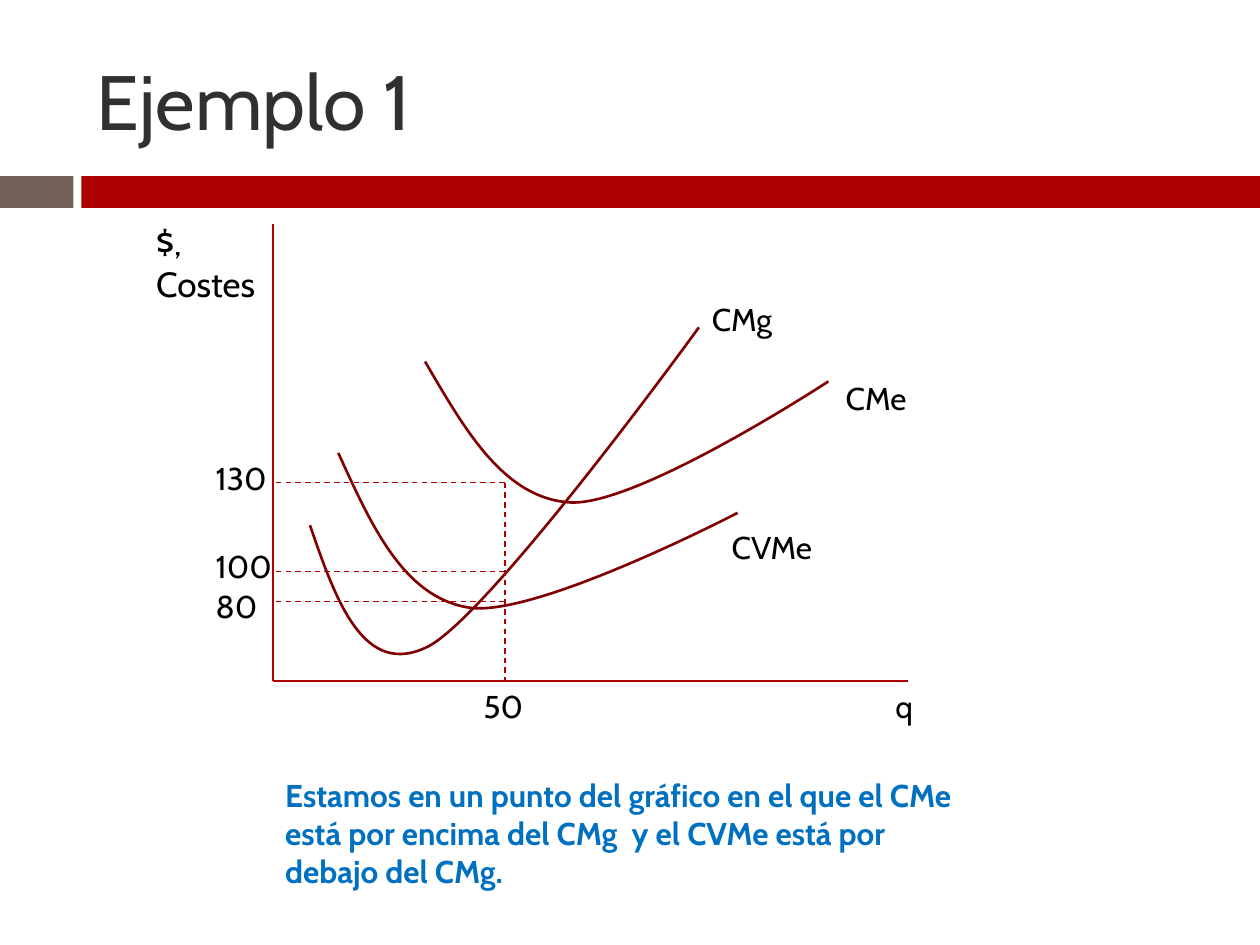
import pptx
import pptx.dml.color
import pptx.enum.dml
import pptx.enum.shapes
import pptx.enum.text
import pptx.oxml.ns
import pptx.util
from lxml import etree

Cm = pptx.util.Cm
Pt = pptx.util.Pt
qn = pptx.oxml.ns.qn
FONT = "Cabin"
RED = "AD0101"
DARK_RED = "800101"
STEPS = 24


def color(hex_code):
    return pptx.dml.color.RGBColor.from_string(hex_code)


def style_text(frame, size, hex_code, bold=False):
    frame.word_wrap = True
    for paragraph in frame.paragraphs:
        paragraph.alignment = pptx.enum.text.PP_ALIGN.LEFT
        paragraph.font.name = FONT
        paragraph.font.size = Pt(size)
        paragraph.font.bold = bold
        paragraph.font.color.rgb = color(hex_code)


def add_label(slide, text, left, top, width=2.69, height=1.02,
              size=18, hex_code="000000", bold=False):
    label = slide.shapes.add_textbox(Cm(left), Cm(top), Cm(width), Cm(height))
    label.text_frame.text = text
    style_text(label.text_frame, size, hex_code, bold)


def add_line(slide, x1, y1, x2, y2, dashed=False):
    line = slide.shapes.add_connector(
        pptx.enum.shapes.MSO_CONNECTOR.STRAIGHT, Cm(x1), Cm(y1), Cm(x2), Cm(y2))
    line.line.color.rgb = color(RED)
    line.line.width = Pt(0.79)
    if dashed:
        line.line.dash_style = pptx.enum.dml.MSO_LINE.DASH
    etree.SubElement(line._element.spPr, qn("a:effectLst"))


def bezier_point(controls, t):
    weights = ((1 - t) ** 3, 3 * t * (1 - t) ** 2, 3 * t ** 2 * (1 - t), t ** 3)
    return tuple(sum(w * p[axis] for w, p in zip(weights, controls)) for axis in (0, 1))


def add_curve(slide, left, top, knots, rotation):
    knots = [(Cm(left + x), Cm(top + y)) for x, y in knots]
    segments = [knots[first:first + 4] for first in range(0, len(knots) - 1, 3)]
    outline = [bezier_point(segment, step / STEPS)
               for segment in segments for step in range(1, STEPS + 1)]
    builder = slide.shapes.build_freeform(*knots[0])
    builder.add_line_segments(outline, close=False)
    curve = builder.convert_to_shape()
    outline_path = curve._element.spPr.find(".//" + qn("a:path"))
    for straight in outline_path.findall(qn("a:lnTo")):
        outline_path.remove(straight)
    for segment in segments:
        bend = etree.SubElement(outline_path, qn("a:cubicBezTo"))
        for x, y in segment[1:]:
            etree.SubElement(bend, qn("a:pt"), x=str(x - curve.left), y=str(y - curve.top))
    curve.rotation = rotation
    curve.shadow.inherit = False
    curve.fill.background()
    curve.line.color.rgb = color(DARK_RED)
    curve.line.width = Pt(1.5)


def add_header(slide, left, top, width):
    bar_top = top + 3.55
    for offset, bar_width, fill in ((0, 1.48, "726056"), (1.64, width - 1.64, RED)):
        bar = slide.shapes.add_shape(
            pptx.enum.shapes.MSO_SHAPE.RECTANGLE,
            Cm(left + offset), Cm(bar_top), Cm(bar_width), Cm(0.64))
        bar.shadow.inherit = False
        bar.fill.solid()
        bar.fill.fore_color.rgb = color(fill)
        bar.line.fill.background()
    title = slide.shapes.title
    title.left, title.top = Cm(left + 1.7), Cm(top + 0.64)
    title.width, title.height = Cm(22.35), Cm(2.74)
    title.text_frame.text = "Ejemplo 1"
    title.text_frame.vertical_anchor = pptx.enum.text.MSO_ANCHOR.MIDDLE
    style_text(title.text_frame, 44, "303030")


def add_cost_graph(slide, left, top, width, height):
    bottom = top + height
    add_line(slide, left, top, left, bottom)
    add_line(slide, left, bottom, left + width, bottom)

    marginal = [(0.75, 6.07), (1.28, 7.62), (1.84, 9.17), (3.14, 8.51),
                (4.43, 7.82), (8.59, 2.08), (8.59, 2.08)]
    average = [(3.07, 2.77), (3.87, 4.14), (4.66, 5.54), (6.01, 5.61),
               (7.38, 5.67), (11.2, 3.17), (11.2, 3.17)]
    cost_curves = (
        ("CMg", (8.6, 1.4), marginal, (0, 0), 0),
        ("CMe", (11.3, 3.0), average, (0, 0), 0),
        ("CVMe", (9.0, 6.0), average, (-1.91, 2.24), 5.7),
    )
    for name, (label_x, label_y), knots, (shift_x, shift_y), rotation in cost_curves:
        add_curve(slide, left + shift_x, top + shift_y, knots, rotation)
        add_label(slide, name, left + label_x, top + label_y)

    quantity_x = left + 4.68
    cost_levels = (("130", 5.21, 4.6), ("100", 7.0, 6.38), ("80", 7.6, 7.18))
    add_line(slide, quantity_x, top + cost_levels[0][1], quantity_x, bottom, dashed=True)
    for cost, level, label_y in cost_levels:
        add_line(slide, quantity_x, top + level, left, top + level, dashed=True)
        add_label(slide, cost, left - 1.4, top + label_y)

    add_label(slide, "50", left + 4.0, bottom)
    add_label(slide, "q", left + 12.3, bottom)
    add_label(slide, "$, Costes", left - 2.6, top - 0.2, 2.79, 1.96, size=20)


def add_conclusion(slide, left, top, width, height):
    add_label(
        slide,
        "Estamos en un punto del gráfico en el que el CMe está por encima "
        "del CMg  y el CVMe está por debajo del CMg.",
        left, top, width, height, hex_code="0070C0", bold=True)


def main():
    deck = pptx.Presentation()
    deck.slide_width, deck.slide_height = Cm(25.4), Cm(19.05)
    slide = deck.slides.add_slide(deck.slide_layouts[5])
    add_header(slide, 0, 0, 25.4)
    add_cost_graph(slide, 5.5, 4.52, 12.8, 9.21)
    add_conclusion(slide, 5.5, 15.52, 14.6, 2.57)
    deck.save("out.pptx")


if __name__ == "__main__":
    main()
